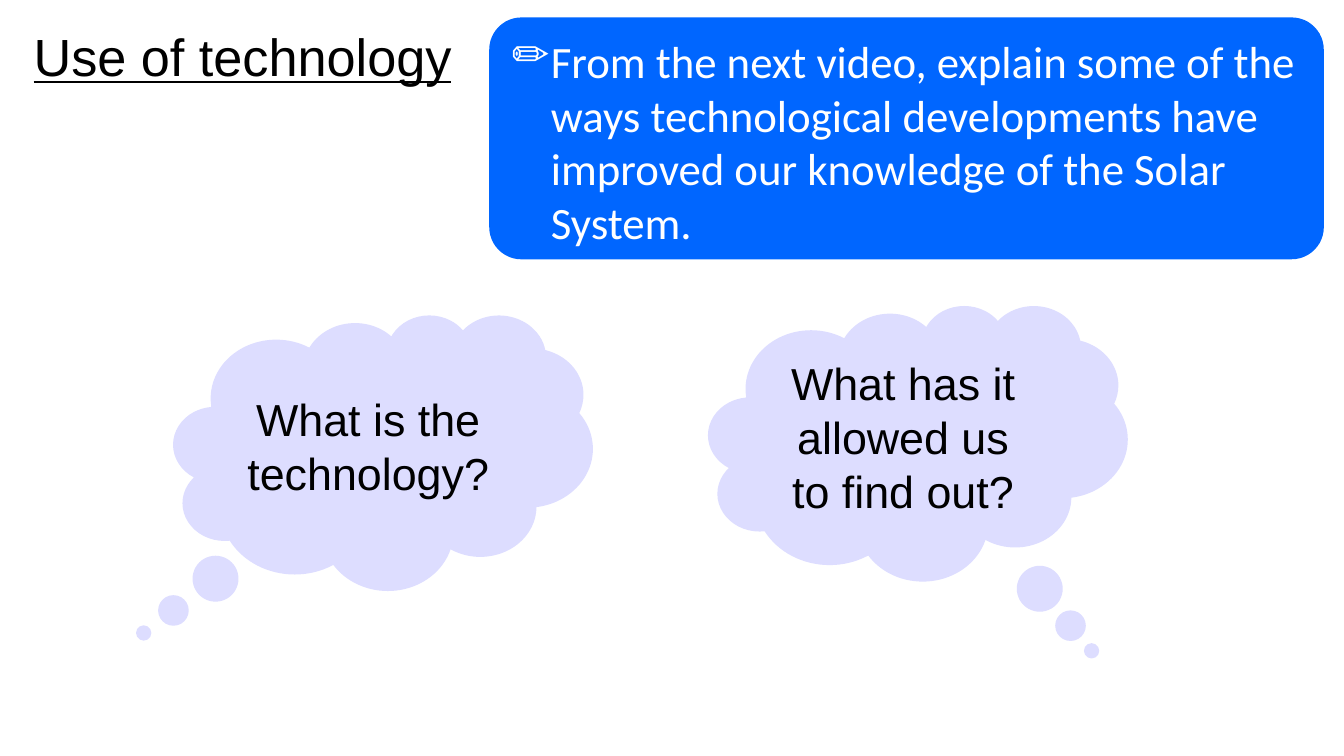
from pptx import Presentation
from pptx.dml.color import RGBColor
from pptx.enum.shapes import MSO_SHAPE as Shape
from pptx.enum.text import MSO_ANCHOR as Anchor, MSO_AUTO_SIZE as Fit, PP_ALIGN as Align
from pptx.oxml.ns import qn
from pptx.util import Inches, Pt
from lxml.etree import SubElement

BLUE = RGBColor(0x00, 0x66, 0xFF)
LILAC = RGBColor(0xDD, 0xDD, 0xFF)
BLACK = RGBColor(0, 0, 0)
WHITE = RGBColor(255, 255, 255)


def write(shape, text, size, font, color, align, anchor):
    """Fill a shape with one styled paragraph and return the paragraph."""
    frame = shape.text_frame
    frame.text = text
    frame.word_wrap = True
    frame.auto_size = Fit.NONE
    frame.vertical_anchor = anchor
    para = frame.paragraphs[0]
    para.alignment = align
    face = para.runs[0].font
    face.size, face.name = Pt(size), font
    face.color.rgb = color
    return para


def add_shape(slide, kind, box, fill, adjust):
    shape = slide.shapes.add_shape(kind, *map(Inches, box))
    shape.shadow.inherit = False
    shape.fill.solid()
    shape.fill.fore_color.rgb = fill
    shape.line.fill.background()
    for i, value in enumerate(adjust):
        shape.adjustments[i] = value
    return shape


def add_title(slide, box, text):
    title = slide.shapes.title
    title.left, title.top, title.width, title.height = map(Inches, box)
    para = write(title, text, 28, "Arial", BLACK, Align.LEFT, Anchor.TOP)
    para.runs[0].font.underline = True


def add_task(slide, box, text):
    panel = add_shape(slide, Shape.ROUNDED_RECTANGLE, box, BLUE, [0.133])
    para = write(panel, text, 24, "Calibri", WHITE, Align.LEFT, Anchor.TOP)
    props = para._p.get_or_add_pPr()
    indent = Inches(0.29)
    props.set("marL", str(indent))
    props.set("indent", str(-indent))
    SubElement(props, qn("a:buChar")).set("char", "✏")


def add_cloud(slide, box, text, tail):
    cloud = add_shape(slide, Shape.CLOUD_CALLOUT, box, LILAC, tail)
    write(cloud, text, 24, "Arial", BLACK, Align.CENTER, Anchor.MIDDLE)


def main():
    deck = Presentation()
    deck.slide_width, deck.slide_height = Inches(10), Inches(10 * 9 / 16)
    slide = deck.slides.add_slide(deck.slide_layouts[5])
    add_title(slide, (0.15, 0.13, 3.57, 0.57), "Use of technology")
    add_task(slide, (3.64, 0.13, 6.21, 1.8),
             "From the next video, explain some of the ways technological "
             "developments have improved our knowledge of the Solar System.")
    add_cloud(slide, (1.29, 2.34, 3.12, 2.05),
              "What is the technology?", (-0.571, 0.656))
    add_cloud(slide, (5.27, 2.27, 3.12, 2.05),
              "What has it allowed us to find out?", (0.414, 0.755))
    deck.save("out.pptx")


if __name__ == "__main__":
    main()
